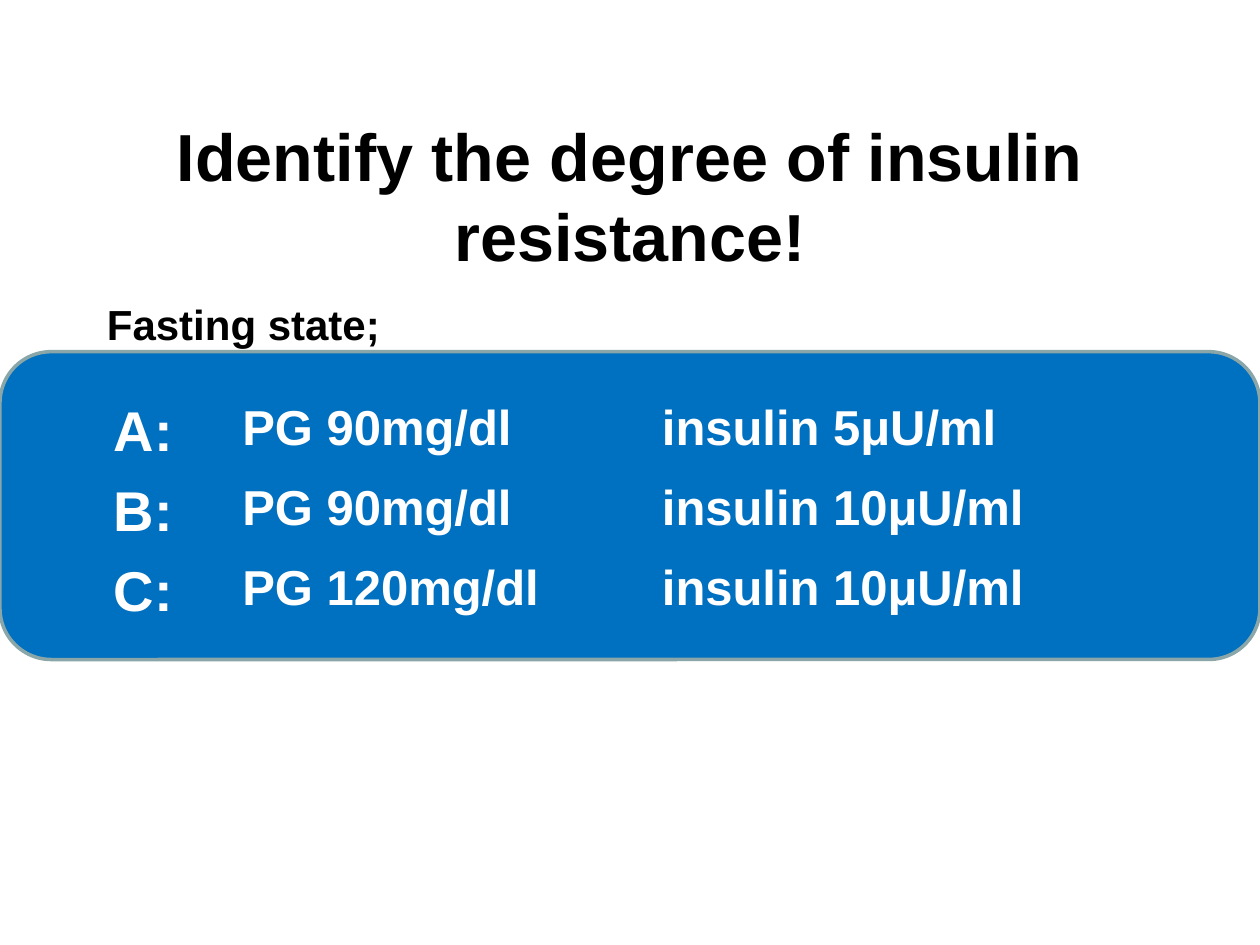
from pptx import Presentation
from pptx.dml.color import RGBColor
from pptx.enum import shapes, text
from pptx.oxml import ns
from pptx.util import Inches, Pt

THEME = {
    "font": "Arial",
    "ink": RGBColor(0x00, 0x00, 0x00),
    "light": RGBColor(0xFF, 0xFF, 0xFF),
    "panel": RGBColor(0x00, 0x70, 0xC0),
    "edge": RGBColor(0x8A, 0xA6, 0xA8),
    "title": 38,
    "state": 24,
    "label": 32,
    "value": 28,
}
NO_STYLE_NO_GRID = "{2D5ABB26-0587-4C30-8999-92F81FD0307C}"

deck = Presentation()
deck.slide_width, deck.slide_height = Inches(10), Inches(7.5)
slide = deck.slides.add_slide(deck.slide_layouts[6])


def area(left, top, width, height):
    across, down = deck.slide_width / 100, deck.slide_height / 100
    return [int(v) for v in (left * across, top * down, width * across, height * down)]


def write(frame, words, size, color):
    frame.text = words
    font = frame.paragraphs[0].runs[0].font
    font.name, font.size, font.bold = THEME["font"], Pt(THEME[size]), True
    font.color.rgb = THEME[color]


panel = slide.shapes.add_shape(
    shapes.MSO_SHAPE.ROUNDED_RECTANGLE, *area(0, 37.22, 100, 32.58))
panel.shadow.inherit = False
panel.fill.solid()
panel.fill.fore_color.rgb = THEME["panel"]
panel.line.color.rgb = THEME["edge"]
panel.line.width = Pt(2)

title = slide.shapes.add_textbox(*area(0, 12.27, 100, 16.67)).text_frame
title.word_wrap = True
title.vertical_anchor = text.MSO_ANCHOR.MIDDLE
write(title, "Identify the degree of insulin resistance!", "title", "ink")
title.paragraphs[0].alignment = text.PP_ALIGN.CENTER

patients = [
    ("A:", "PG 90mg/dl", "insulin 5μU/ml"),
    ("B:", "PG 90mg/dl", "insulin 10μU/ml"),
    ("C:", "PG 120mg/dl", "insulin 10μU/ml"),
]
table_left = 8.04
shares = [10.2, 33.3, 37.8, 4.1]
shares.append(100 - table_left - sum(shares))
readings = slide.shapes.add_table(
    len(patients), len(shares), *area(table_left, 41.78, sum(shares), 25.3)).table
readings.first_row = readings.horz_banding = False
readings._tbl.tblPr.find(ns.qn("a:tableStyleId")).text = NO_STYLE_NO_GRID
for column, share in zip(readings.columns, shares):
    column.width = int(deck.slide_width * share / 100)
for cell in readings.iter_cells():
    cell.fill.background()
for r, patient in enumerate(patients):
    for c, words in enumerate(patient):
        write(readings.cell(r, c).text_frame, words, "value" if c else "label", "light")

state = slide.shapes.add_textbox(*area(7.5, 30.93, 23.9, 6.8)).text_frame
state.word_wrap = False
state.auto_size = text.MSO_AUTO_SIZE.SHAPE_TO_FIT_TEXT
write(state, "Fasting state;", "state", "ink")

deck.save("out.pptx")
